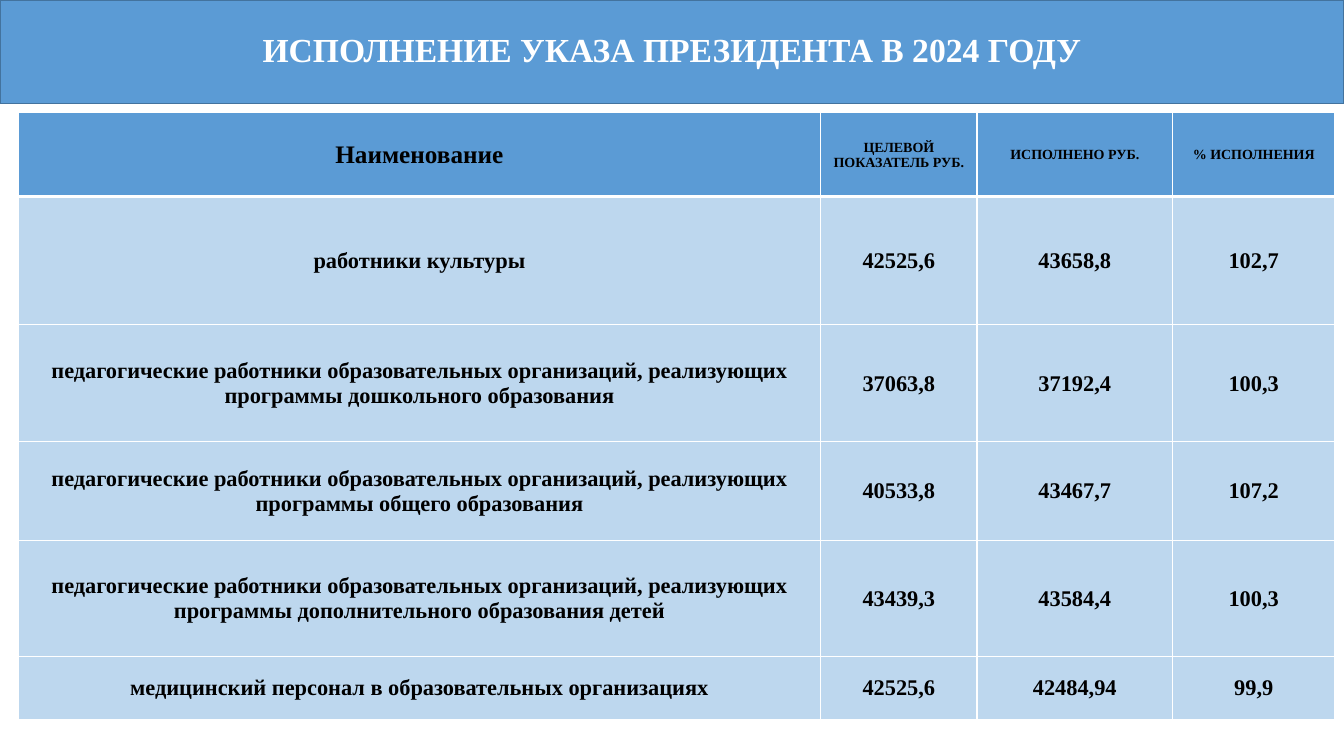
from lxml import etree
from pptx import Presentation
from pptx.dml.color import RGBColor
from pptx.enum.shapes import MSO_SHAPE
from pptx.enum.text import MSO_ANCHOR, PP_ALIGN
from pptx.oxml.ns import qn
from pptx.util import Pt

EMU_PER_PX = 9144  # 100 px to the inch
FONT = "Times New Roman"
COLORS = {
    "blue": "5B9BD5",
    "dark_blue": "43739E",
    "light_blue": "BDD7EE",
    "white": "FFFFFF",
    "black": "000000",
}
TITLE = "ИСПОЛНЕНИЕ УКАЗА ПРЕЗИДЕНТА В 2024 ГОДУ"
TEACHERS = "педагогические работники образовательных организаций, реализующих программы "
ROWS = [
    ("Наименование", "ЦЕЛЕВОЙ ПОКАЗАТЕЛЬ РУБ.", "ИСПОЛНЕНО РУБ.", "% ИСПОЛНЕНИЯ"),
    ("работники культуры", "42525,6", "43658,8", "102,7"),
    (TEACHERS + "дошкольного образования", "37063,8", "37192,4", "100,3"),
    (TEACHERS + "общего образования", "40533,8", "43467,7", "107,2"),
    (TEACHERS + "дополнительного образования детей", "43439,3", "43584,4", "100,3"),
    ("медицинский персонал в образовательных организациях", "42525,6", "42484,94", "99,9"),
]
COLUMN_WIDTHS = [796, 155, 194, 161]
ROW_HEIGHTS = [83, 127, 116, 98, 115, 63]


def px(length):
    return length * EMU_PER_PX


def color(name):
    return RGBColor.from_string(COLORS[name])


def write_text(text_frame, text, size, color_name):
    paragraph = text_frame.paragraphs[0]
    paragraph.text = text
    paragraph.alignment = PP_ALIGN.CENTER
    font = paragraph.font
    font.name, font.size, font.bold = FONT, Pt(size), True
    font.color.rgb = color(color_name)
    return paragraph


def add_title_band(slide):
    band = slide.shapes.add_shape(MSO_SHAPE.RECTANGLE, 0, 0, px(1333), px(103))
    band.shadow.inherit = False
    band.fill.solid()
    band.fill.fore_color.rgb = color("blue")
    band.line.color.rgb = color("dark_blue")
    band.line.width = Pt(1)
    band.text_frame.word_wrap = True
    band.text_frame.vertical_anchor = MSO_ANCHOR.MIDDLE
    write_text(band.text_frame, TITLE, 24, "white").line_spacing = 0.9


def add_borders(cell, top, bottom):
    """Draw white cell borders; top and bottom are widths in points."""
    properties = cell._tc.get_or_add_tcPr()
    for side, width in (("L", 1), ("R", 1), ("T", top), ("B", bottom)):
        line = etree.SubElement(properties, qn(f"a:ln{side}"), w=str(Pt(width)))
        fill = etree.SubElement(line, qn("a:solidFill"))
        etree.SubElement(fill, qn("a:srgbClr"), val=COLORS["white"])


def format_cell(cell, text, size, fill_name, top, bottom):
    add_borders(cell, top, bottom)
    cell.fill.solid()
    cell.fill.fore_color.rgb = color(fill_name)
    cell.vertical_anchor = MSO_ANCHOR.MIDDLE
    cell.margin_left = cell.margin_top = cell.margin_right = px(1)
    cell.margin_bottom = 0
    write_text(cell.text_frame, text, size, "black")


def add_results_table(slide):
    table = slide.shapes.add_table(
        len(ROWS), len(COLUMN_WIDTHS), px(18), px(112),
        px(sum(COLUMN_WIDTHS)), px(sum(ROW_HEIGHTS)),
    ).table
    for column, width in zip(table.columns, COLUMN_WIDTHS):
        column.width = px(width)
    for row_index, (row, height) in enumerate(zip(table.rows, ROW_HEIGHTS)):
        row.height = px(height)
        is_header = row_index == 0
        fill_name = "blue" if is_header else "light_blue"
        top = 3 if row_index == 1 else 1
        bottom = 3 if is_header else 1
        for column_index, text in enumerate(ROWS[row_index]):
            header_size = 18 if column_index == 0 else 10
            size = header_size if is_header else 16
            format_cell(row.cells[column_index], text, size, fill_name, top, bottom)


def main():
    presentation = Presentation()
    presentation.slide_width = px(1333)
    presentation.slide_height = px(750)
    slide = presentation.slides.add_slide(presentation.slide_layouts[6])
    add_results_table(slide)
    add_title_band(slide)
    presentation.save("out.pptx")


if __name__ == "__main__":
    main()
